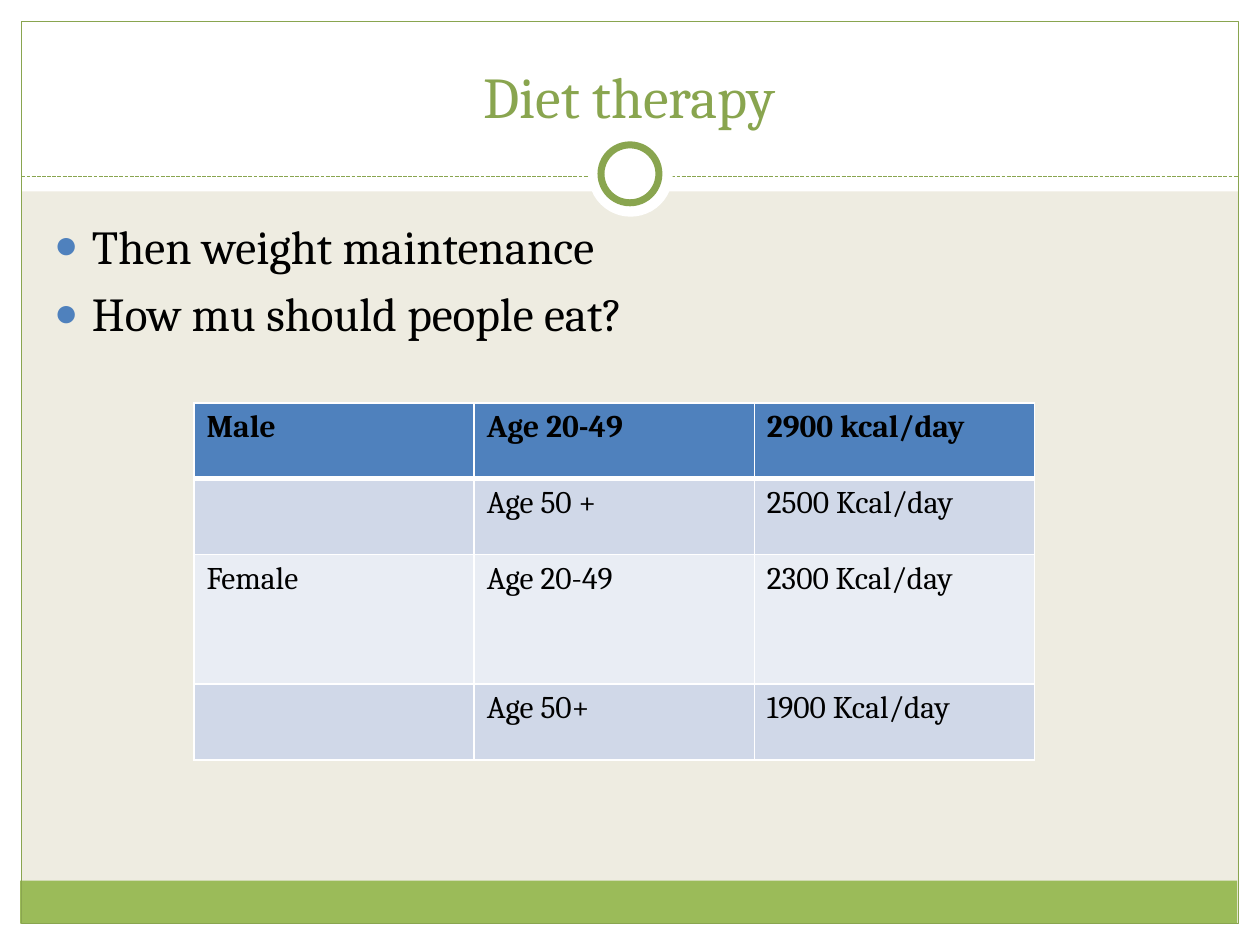
import dataclasses

import lxml.etree
import pptx
import pptx.dml.color
import pptx.enum.dml
import pptx.enum.shapes
import pptx.enum.text
import pptx.oxml.ns
import pptx.util

Inches = pptx.util.Inches
Pt = pptx.util.Pt
SHAPE = pptx.enum.shapes.MSO_SHAPE


@dataclasses.dataclass(frozen=True)
class Theme:
    font: str = "Cambria"
    title_size: int = 33
    body_size: int = 27
    table_size: int = 18
    background: str = "EEECE1"
    white: str = "FFFFFF"
    text: str = "000000"
    green: str = "9BBB59"
    dark_green: str = "89A54F"
    blue: str = "4F81BD"
    bands: tuple = ("D0D8E8", "E9EDF4")


def rgb(value):
    return pptx.dml.color.RGBColor.from_string(value)


def sub(parent, tag, **attrs):
    return lxml.etree.SubElement(parent, pptx.oxml.ns.qn(tag), attrs)


class Deck:
    """Holds the theme and the current slide, and draws each kind of element."""

    def __init__(self, prs, theme):
        self.theme = theme
        self.s = prs.slides.add_slide(prs.slide_layouts[1])
        fill = self.s.background.fill
        fill.solid()
        fill.fore_color.rgb = rgb(theme.background)

    def style(self, p, size, color, bold=False):
        p.font.name = self.theme.font
        p.font.size = Pt(size)
        p.font.bold = bold
        p.font.color.rgb = rgb(color)

    def shape(self, kind, box, fill=None, line=None, width=0.75):
        sp = self.s.shapes.add_shape(kind, *map(Inches, box))
        sp.shadow.inherit = False
        if fill:
            sp.fill.solid()
            sp.fill.fore_color.rgb = rgb(fill)
        else:
            sp.fill.background()
        if line:
            sp.line.color.rgb = rgb(line)
            sp.line.width = Pt(width)
        else:
            sp.line.fill.background()

    def dashed_line(self, x1, y1, x2, y2):
        line = self.s.shapes.add_connector(
            pptx.enum.shapes.MSO_CONNECTOR.STRAIGHT, *map(Inches, (x1, y1, x2, y2)))
        line.line.color.rgb = rgb(self.theme.dark_green)
        line.line.width = Pt(0.75)
        line.line.dash_style = pptx.enum.dml.MSO_LINE.SQUARE_DOT
        sub(line._element.spPr, "a:effectLst")

    def place(self, sp, box, anchor):
        sp.left, sp.top, sp.width, sp.height = map(Inches, box)
        sp._element.getparent().append(sp._element)
        tf = sp.text_frame
        tf.word_wrap = True
        tf.auto_size = pptx.enum.text.MSO_AUTO_SIZE.NONE
        tf.vertical_anchor = anchor
        return tf

    def title(self, text, box):
        tf = self.place(self.s.shapes.title, box, pptx.enum.text.MSO_ANCHOR.BOTTOM)
        tf.text = text
        p = tf.paragraphs[0]
        p.alignment = pptx.enum.text.PP_ALIGN.CENTER
        self.style(p, self.theme.title_size, self.theme.dark_green)

    def bullets(self, items, box):
        tf = self.place(self.s.placeholders[1], box, pptx.enum.text.MSO_ANCHOR.TOP)
        tf.text = "\n".join(items)
        for i, p in enumerate(tf.paragraphs):
            p.space_before = Pt(6 if i else 0)
            pPr = p._p.get_or_add_pPr()
            pPr.set("marL", str(Inches(0.3)))
            pPr.set("indent", str(Inches(-0.3)))
            sub(sub(pPr, "a:buClr"), "a:srgbClr", val=self.theme.blue)
            sub(pPr, "a:buSzPct", val="85000")
            sub(pPr, "a:buChar", char="●")
            self.style(p, self.theme.body_size, self.theme.text)

    def cell(self, cell, text, fill, bold, borders):
        cell.text = text
        self.style(cell.text_frame.paragraphs[0], self.theme.table_size,
                   self.theme.text, bold)
        tcPr = cell._tc.get_or_add_tcPr()
        for side, width in borders.items():
            ln = sub(tcPr, f"a:ln{side}", w=str(Pt(width)))
            sub(sub(ln, "a:solidFill"), "a:srgbClr", val=self.theme.white)
        cell.fill.solid()
        cell.fill.fore_color.rgb = rgb(fill)

    def table(self, rows, heights, box):
        table = self.s.shapes.add_table(
            len(rows), len(rows[0]), *map(Inches, box)).table
        for i, (row, height) in enumerate(zip(rows, heights)):
            table.rows[i].height = Inches(height)
            header = i == 0
            fill = self.theme.blue if header else self.theme.bands[(i - 1) % 2]
            borders = {"L": 1, "R": 1, "T": 3 if i == 1 else 1, "B": 3 if header else 1}
            for j, text in enumerate(row):
                self.cell(table.cell(i, j), text, fill, header, borders)


def main():
    prs = pptx.Presentation()
    prs.slide_width, prs.slide_height = Inches(10), Inches(7.5)
    theme = Theme()
    deck = Deck(prs, theme)

    margins = [(0, 7.33, 10, 0.17), (0, 0, 10, 1.52),
               (0, 0, 0.17, 7.5), (9.83, 0, 0.17, 7.5)]
    for box in margins:
        deck.shape(SHAPE.RECTANGLE, box, theme.white)
    deck.shape(SHAPE.RECTANGLE, (0.16, 6.99, 9.66, 0.34), theme.green)
    deck.shape(SHAPE.RECTANGLE, (0.17, 0.17, 9.66, 7.16), line=theme.dark_green)
    deck.dashed_line(0.17, 1.4, 9.83, 1.4)
    deck.shape(SHAPE.OVAL, (4.67, 1.05, 0.67, 0.67), theme.white)
    deck.shape(SHAPE.OVAL, (4.77, 1.15, 0.46, 0.46), theme.white, theme.dark_green, 4)

    deck.title("Diet therapy", (0.33, 0.25, 9.33, 0.83))
    deck.bullets(["Then weight maintenance", "How mu should people eat?"],
                 (0.33, 1.67, 9.3, 5))
    deck.table([["Male", "Age 20-49", "2900 kcal/day"],
                ["", "Age 50 +", "2500 Kcal/day"],
                ["Female", "Age 20-49", "2300 Kcal/day"],
                ["", "Age 50+", "1900 Kcal/day"]],
               [0.6, 0.6, 1.03, 0.6], (1.54, 3.2, 6.67, 2.83))
    prs.save("out.pptx")


if __name__ == "__main__":
    main()
